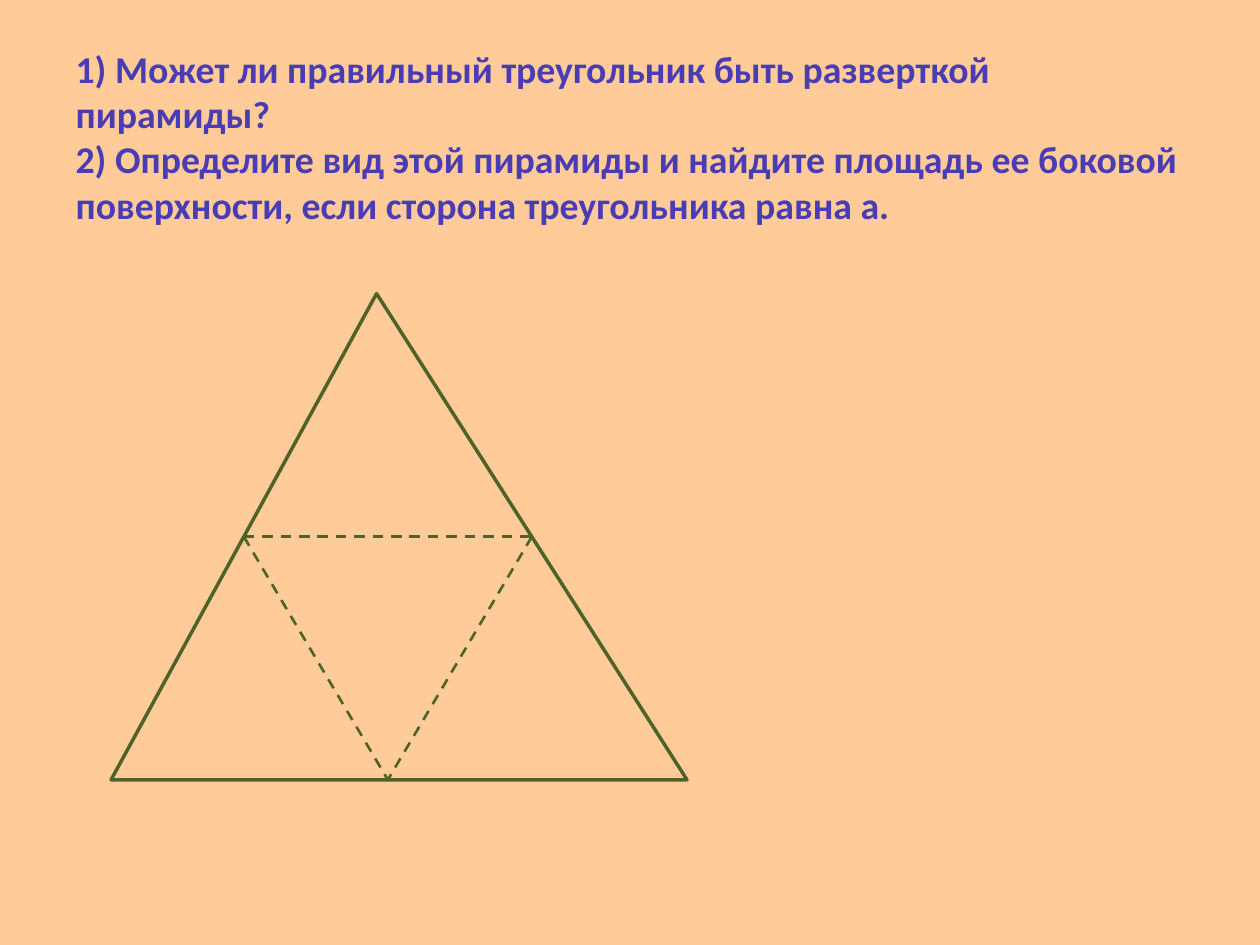
from dataclasses import dataclass

from pptx import Presentation
from pptx import util as u
from pptx.dml.color import RGBColor
from pptx.enum import dml, shapes, text
from pptx.oxml import parse_xml
from pptx.oxml.ns import nsdecls

BACKGROUND = "FFCC99"
TITLE_COLOR = "4A3CB2"
LINE_COLOR = "4F6228"
QUESTION = (
    "1) Может ли правильный треугольник быть разверткой пирамиды?\v"
    "2) Определите вид этой пирамиды и найдите площадь ее боковой "
    "поверхности, если сторона треугольника равна а."
)


@dataclass(frozen=True)
class Point:
    x: float
    y: float


@dataclass(frozen=True)
class Triangle:
    left: float
    top: float
    width: float
    height: float
    apex: float

    def left_middle(self) -> Point:
        return Point(self.left + self.width * self.apex / 2, self.top + self.height / 2)

    def right_middle(self) -> Point:
        middle = self.left_middle()
        return Point(middle.x + self.width / 2, middle.y)


def rgb(value: str) -> RGBColor:
    return RGBColor.from_string(value)


def draw_title(s) -> None:
    sp = s.shapes.title
    sp.left, sp.top, sp.width, sp.height = u.Cm(1.27), u.Cm(0.76), u.Cm(22.86), u.Cm(3.96)
    tf = sp.text_frame
    tf.text = QUESTION
    tf.word_wrap = True
    tf.auto_size = text.MSO_AUTO_SIZE.NONE
    tf.vertical_anchor = text.MSO_ANCHOR.MIDDLE
    p = tf.paragraphs[0]
    p.alignment = text.PP_ALIGN.LEFT
    for r in p.runs:
        r.font.name = "Calibri"
        r.font.size = u.Pt(21.6)
        r.font.bold = True
        r.font.color.rgb = rgb(TITLE_COLOR)


def draw_triangle(s, net: Triangle) -> None:
    sp = s.shapes.add_shape(
        shapes.MSO_SHAPE.ISOSCELES_TRIANGLE,
        u.Cm(net.left), u.Cm(net.top), u.Cm(net.width), u.Cm(net.height),
    )
    sp.adjustments[0] = net.apex
    sp.shadow.inherit = False
    sp.fill.background()
    sp.line.color.rgb = rgb(LINE_COLOR)
    sp.line.width = u.Pt(2)


def draw_fold(s, start: Point, end: Point) -> None:
    fold = s.shapes.add_connector(
        shapes.MSO_CONNECTOR.STRAIGHT,
        u.Cm(start.x), u.Cm(start.y), u.Cm(end.x), u.Cm(end.y),
    )
    fold.line.color.rgb = rgb(LINE_COLOR)
    fold.line.width = u.Pt(1.5)
    fold.line.dash_style = dml.MSO_LINE.DASH
    fold._element.spPr.append(parse_xml(f"<a:effectLst {nsdecls('a')}/>"))


def main() -> None:
    prs = Presentation()
    prs.slide_width, prs.slide_height = u.Cm(25.4), u.Cm(19.05)
    s = prs.slides.add_slide(prs.slide_layouts[5])
    s.background.fill.solid()
    s.background.fill.fore_color.rgb = rgb(BACKGROUND)

    draw_title(s)
    net = Triangle(left=2.24, top=5.92, width=11.61, height=9.8, apex=0.461)
    draw_triangle(s, net)
    left, right = net.left_middle(), net.right_middle()
    bottom = Point((left.x + right.x) / 2, net.top + net.height)
    for start, end in ((left, right), (left, bottom), (right, bottom)):
        draw_fold(s, start, end)

    prs.save("out.pptx")


if __name__ == "__main__":
    main()
